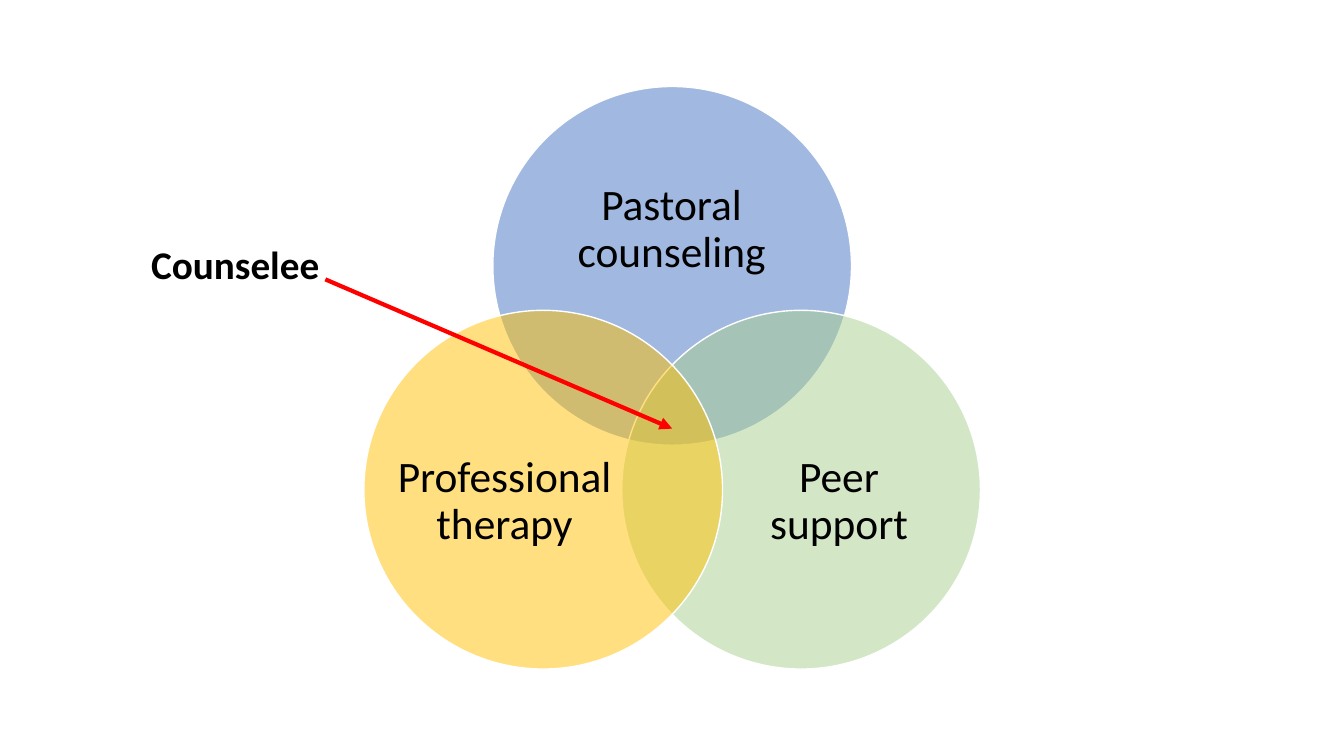
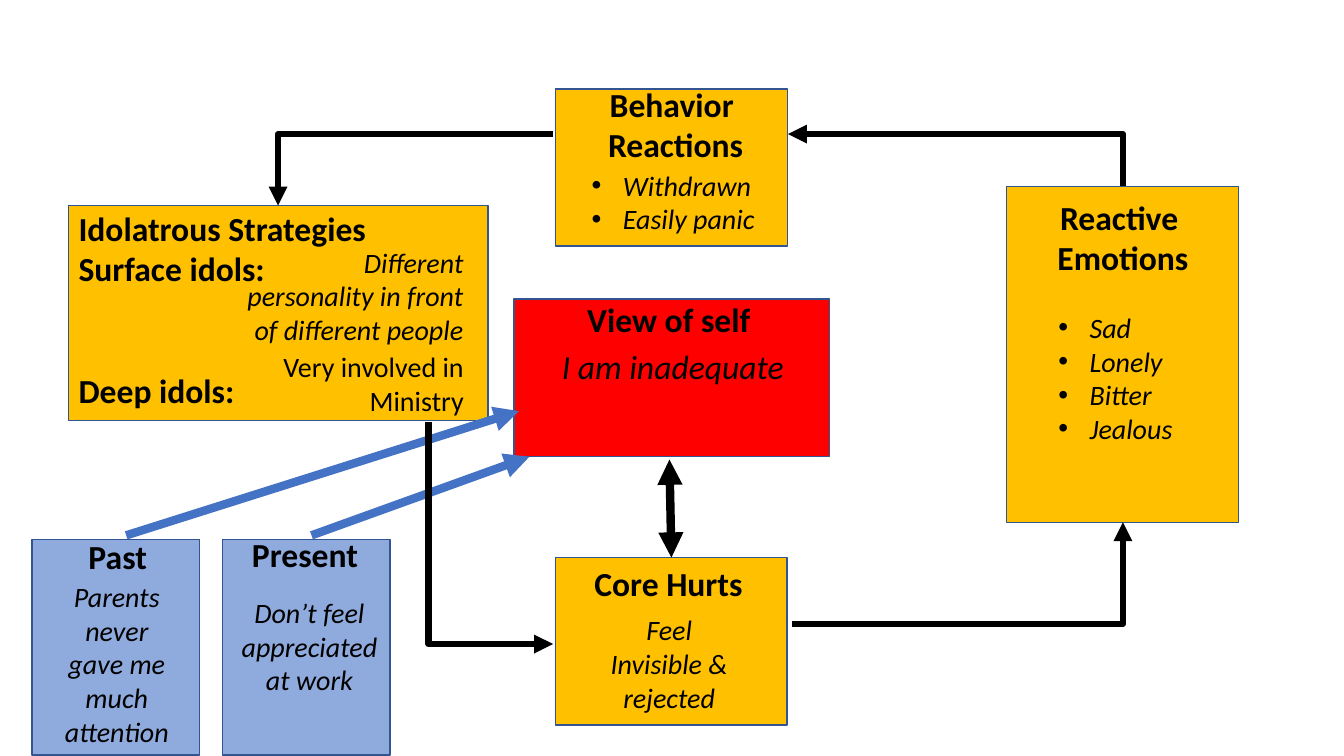
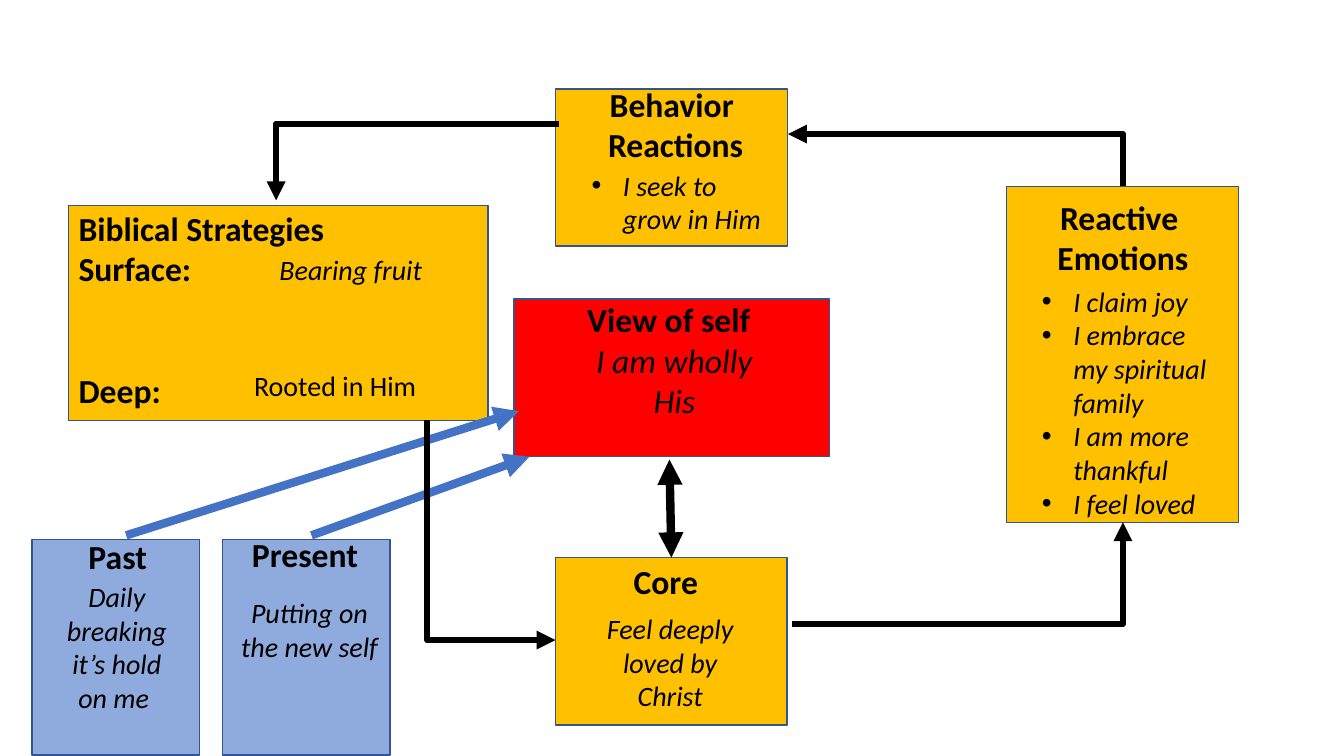
"""Build three slides on counseling: a Venn diagram and two heart-cycle diagrams."""
from dataclasses import dataclass
from functools import partial
from typing import Optional

from lxml import etree
from pptx import Presentation
from pptx import util as u
from pptx.dml.color import RGBColor
from pptx.enum import shapes, text
from pptx.oxml import ns
from pptx.shapes.autoshape import Shape
from pptx.shapes.connector import Connector
from pptx.slide import Slide

FONT = "Calibri"
COLOURS = {
    "black": "000000",
    "white": "FFFFFF",
    "red": "FF0000",
    "gold": "FFC000",
    "green": "A9D18E",
    "blue": "4472C4",
    "pale blue": "8FAADC",
    "outline": "325491",
}
PROCESS = shapes.MSO_SHAPE.FLOWCHART_PROCESS
LEFT, CENTER, RIGHT = text.PP_ALIGN.LEFT, text.PP_ALIGN.CENTER, text.PP_ALIGN.RIGHT
TOP_SIDE = 0
BULLET_INDENT = 0.79
CIRCLE_SIZE = 9.04


@dataclass(frozen=True)
class Panel:
    """A filled shape, placed in centimetres."""

    left: float
    top: float
    width: float
    height: float
    fill: str
    kind: shapes.MSO_SHAPE = PROCESS
    line: str = "outline"
    opacity: int = 100


@dataclass(frozen=True)
class Note:
    """A text box, one paragraph per line, placed in centimetres."""

    left: float
    top: float
    width: float
    height: float
    lines: tuple[str, ...]
    size: int = 20
    bold: bool = False
    italic: bool = False
    align: text.PP_ALIGN = CENTER
    wrap: bool = True
    bullets: bool = False
    middle: bool = False
    last_gap: int = 0


@dataclass(frozen=True)
class Arrow:
    """An arrow that is straight or turns once, going "across" or "along" first."""

    start: tuple[float, float]
    end: tuple[float, float]
    colour: str = "black"
    weight: float = 4.5
    first: str = ""
    double: bool = False


Heading = partial(Note, size=24, bold=True, align=LEFT, wrap=False)
Remark = partial(Note, italic=True)
Bullets = partial(Note, italic=True, bullets=True, align=LEFT)
Label = partial(Note, size=31, middle=True)
Circle = partial(Panel, width=CIRCLE_SIZE, height=CIRCLE_SIZE, kind=shapes.MSO_SHAPE.OVAL,
                 line="white", opacity=50)
Strategies = partial(Note, 1.73, 5.11, 8.05, 5.38, size=24, bold=True, align=LEFT, last_gap=58)

VENN_CIRCLES = (
    Circle(12.42, 2.18, fill="blue"),
    Circle(15.67, 7.82, fill="green"),
    Circle(9.17, 7.82, fill="gold"),
)
VENN_ARROW = Arrow((8.2, 7.04), (16.94, 10.8), "red", 3)
VENN_NOTES = (
    Label(13.61, 3.76, 6.63, 4.06, ("Pastoral counseling",)),
    Label(18.44, 10.16, 5.41, 4.98, ("Peer support",)),
    Label(10.01, 10.16, 5.41, 4.98, ("Professional therapy",)),
    Heading(3.56, 5.92, 4.8, 1.45, ("Counselee",), size=28),
)

CYCLE_PANELS = {
    "view": Panel(12.95, 7.54, 7.95, 3.96, "red"),
    "core": Panel(14, 14.05, 5.84, 4.22, "gold", shapes.MSO_SHAPE.RECTANGLE),
    "behavior": Panel(14, 2.24, 5.84, 3.96, "gold"),
    "emotions": Panel(25.37, 4.7, 5.84, 8.46, "gold"),
    "strategies": Panel(1.73, 5.18, 10.57, 5.41, "gold"),
    "past": Panel(0.81, 13.59, 4.22, 5.44, "pale blue"),
    "present": Panel(5.61, 13.59, 4.22, 5.44, "pale blue"),
}
CYCLE_ARROWS = (
    Arrow((3.18, 13.49), (13.08, 10.36), "blue", 6),
    Arrow((7.85, 13.49), (13.34, 11.51), "blue", 6),
    Arrow((28.3, 4.7), (19.86, 3.38), first="along"),
    Arrow((19.96, 15.72), (28.3, 13.16), first="across"),
)
VIEW_TO_CORE = Arrow((16.87, 11.58), (16.92, 14.05), weight=6, double=True)
CYCLE_HEADINGS = (
    Heading(1.98, 13.39, 2.01, 1.27, ("Past",)),
    Heading(6.1, 13.34, 3.23, 1.27, ("Present",)),
    Heading(26.37, 4.83, 3.86, 2.31, ("Reactive ", "Emotions"), align=CENTER),
    Heading(14.86, 1.98, 4.14, 2.31, ("Behavior", " Reactions"), align=CENTER),
    Heading(14.55, 7.42, 4.67, 1.27, ("View of self",)),
)

IDOL_ARROWS = (
    Arrow((13.94, 3.38), (7.01, 5.18), first="across"),
    Arrow((10.8, 10.64), (13.94, 16.23), first="along"),
)
IDOL_NOTES = (
    Heading(14.73, 14.05, 4.29, 1.27, ("Core Hurts",)),
    Strategies(("Idolatrous Strategies", "Surface idols:", "Deep idols:")),
    Remark(1.19, 14.48, 3.51, 4.52, ("Parents never gave me much attention",)),
    Remark(5.77, 14.88, 4.06, 2.82, ("Don’t feel appreciated at work",)),
    Remark(15.11, 15.32, 3.51, 2.82, ("Feel Invisible & rejected",)),
    Bullets(26.42, 7.7, 3.43, 3.68, ("Sad", "Lonely", "Bitter", "Jealous"), wrap=False),
    Bullets(14.66, 4.11, 4.72, 1.96, ("Withdrawn", "Easily panic"), wrap=False),
    Note(6.1, 8.69, 5.84, 1.96, ("Very involved in Ministry",), align=RIGHT),
    Remark(5.94, 6.05, 5.99, 2.82, ("Different personality in front of different people",),
           align=RIGHT),
    Remark(13.87, 8.59, 6.17, 2.31, ("I am inadequate",), size=24, wrap=False),
)

BIBLICAL_ARROWS = (
    Arrow((14.1, 3.12), (6.96, 5.05), first="across"),
    Arrow((10.77, 10.59), (14, 16.13), first="along"),
)
BIBLICAL_NOTES = (
    Heading(15.72, 14, 2.34, 1.27, ("Core",)),
    Strategies(("Biblical Strategies", "Surface:", "Deep:")),
    Remark(1.19, 14.48, 3.51, 3.68, ("Daily breaking it’s hold on me ",)),
    Remark(5.77, 14.88, 4.06, 1.96, ("Putting on the new self",)),
    Remark(14.78, 15.29, 4.22, 2.82, ("Feel deeply loved by Christ",)),
    Bullets(26.01, 7.04, 4.8, 6.25, ("I claim joy", "I embrace my spiritual family",
                                     "I am more thankful", "I feel loved")),
    Bullets(14.66, 4.11, 5.21, 1.96, ("I seek to grow in Him",)),
    Note(4.9, 9.17, 5.84, 1.12, ("Rooted in Him",), align=RIGHT),
    Remark(4.9, 6.25, 5.99, 1.12, ("Bearing fruit",), align=RIGHT),
    Remark(14.66, 8.43, 4.67, 3.33, ("I am wholly His",), size=24),
)


def colour(name: str) -> RGBColor:
    """Look up a colour by its name."""
    return RGBColor.from_string(COLOURS[name])


def add_child(parent: etree._Element, tag: str, **attributes: str) -> etree._Element:
    """Append a drawing element to a parent."""
    return etree.SubElement(parent, ns.qn(tag), attributes)


def draw_panel(page: Slide, panel: Panel) -> Shape:
    """Draw one filled and outlined shape."""
    frame = map(u.Cm, (panel.left, panel.top, panel.width, panel.height))
    box = page.shapes.add_shape(panel.kind, *frame)
    box.shadow.inherit = False
    box.fill.solid()
    box.fill.fore_color.rgb = colour(panel.fill)
    box.line.color.rgb = colour(panel.line)
    box.line.width = u.Pt(1)
    if panel.opacity < 100:
        tint = box.fill._xPr.find(".//" + ns.qn("a:srgbClr"))
        add_child(tint, "a:alpha", val=str(panel.opacity * 1000))
    return box


def draw_note(page: Slide, note: Note) -> None:
    """Draw one text box."""
    frame = map(u.Cm, (note.left, note.top, note.width, note.height))
    body = page.shapes.add_textbox(*frame).text_frame
    body.word_wrap = note.wrap
    if note.middle:
        body.vertical_anchor = text.MSO_ANCHOR.MIDDLE
        body.margin_left = body.margin_right = body.margin_top = body.margin_bottom = 0
    else:
        body.auto_size = text.MSO_AUTO_SIZE.SHAPE_TO_FIT_TEXT
    for index, line in enumerate(note.lines):
        para = body.add_paragraph() if index else body.paragraphs[0]
        para.alignment = note.align
        if note.middle:
            para.line_spacing = 0.9
        if note.last_gap and index == len(note.lines) - 1:
            para.space_before = u.Pt(note.last_gap)
        if note.bullets:
            properties = para._p.get_or_add_pPr()
            properties.set("marL", str(u.Cm(BULLET_INDENT)))
            properties.set("indent", str(-u.Cm(BULLET_INDENT)))
            add_child(properties, "a:buFont", typeface="Arial")
            add_child(properties, "a:buChar", char="•")
        span = para.add_run()
        span.text = line
        span.font.name = FONT
        span.font.size = u.Pt(note.size)
        span.font.bold = note.bold
        span.font.italic = note.italic
        span.font.color.rgb = colour("black")


def draw_arrow(page: Slide, arrow: Arrow, target: Optional[Shape] = None) -> Connector:
    """Draw one arrow, joined to the top of its target if there is one."""
    (x1, y1), (x2, y2) = arrow.start, arrow.end
    if arrow.first == "along":
        mid_x, mid_y = (x1 + x2) / 2, (y1 + y2) / 2
        half_x, half_y = (x2 - x1) / 2, (y2 - y1) / 2
        x1, x2 = mid_x + half_y, mid_x - half_y
        y1, y2 = mid_y - half_x, mid_y + half_x
    kind = shapes.MSO_CONNECTOR.ELBOW if arrow.first else shapes.MSO_CONNECTOR.STRAIGHT
    link = page.shapes.add_connector(kind, *map(u.Cm, (x1, y1, x2, y2)))
    properties = link._element.spPr
    if arrow.first:
        properties.find(ns.qn("a:prstGeom")).set("prst", "bentConnector2")
    if arrow.first == "along":
        properties.find(ns.qn("a:xfrm")).set("rot", str(270 * 60000))
    if target is not None:
        link.end_connect(target, TOP_SIDE)
    link.line.color.rgb = colour(arrow.colour)
    link.line.width = u.Pt(arrow.weight)
    stroke = link.line._get_or_add_ln()
    if arrow.double:
        add_child(stroke, "a:headEnd", type="triangle")
    add_child(stroke, "a:tailEnd", type="triangle")
    add_child(properties, "a:effectLst")
    return link


def draw_venn(page: Slide) -> None:
    """Draw the three overlapping kinds of care."""
    for circle in VENN_CIRCLES:
        draw_panel(page, circle)
    for note in VENN_NOTES:
        draw_note(page, note)
    draw_arrow(page, VENN_ARROW)


def draw_cycle(page: Slide, arrows: tuple[Arrow, ...], notes: tuple[Note, ...]) -> None:
    """Draw the shared cycle with the arrows and notes of one slide."""
    boxes = {name: draw_panel(page, panel) for name, panel in CYCLE_PANELS.items()}
    for arrow in CYCLE_ARROWS + arrows:
        draw_arrow(page, arrow)
    draw_arrow(page, VIEW_TO_CORE, boxes["core"])
    for note in CYCLE_HEADINGS + notes:
        draw_note(page, note)


def main() -> None:
    """Build and save the deck."""
    deck = Presentation()
    deck.slide_width, deck.slide_height = u.Cm(33.87), u.Cm(19.05)
    blank = deck.slide_layouts[6]
    draw_venn(deck.slides.add_slide(blank))
    draw_cycle(deck.slides.add_slide(blank), IDOL_ARROWS, IDOL_NOTES)
    draw_cycle(deck.slides.add_slide(blank), BIBLICAL_ARROWS, BIBLICAL_NOTES)
    deck.save("out.pptx")


if __name__ == "__main__":
    main()
